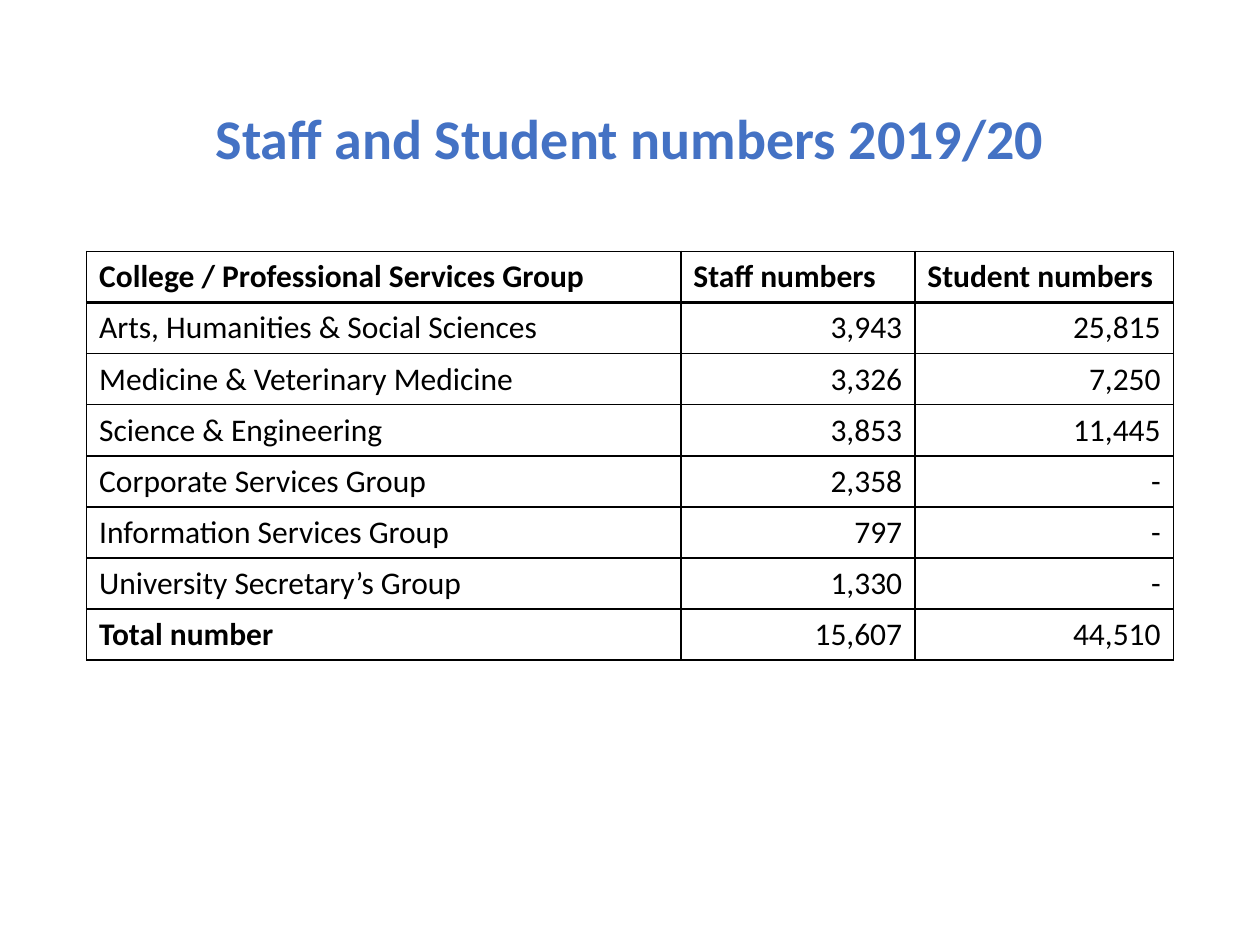
from lxml.etree import SubElement
from pptx import Presentation
from pptx.dml.color import RGBColor
from pptx.enum.text import MSO_ANCHOR, PP_ALIGN
from pptx.oxml.ns import qn
from pptx.util import Pt

COLORS = {"title": "4472C4", "text": "000000", "border": "000000"}
LEFT, WIDTH = 49.5, 621
COLUMN_WIDTHS = [339.6, 133.7, 147.7]
ROW_HEIGHT = 29.16
ROWS = [
    ("College / Professional Services Group", "Staff numbers", "Student numbers"),
    ("Arts, Humanities & Social Sciences", "3,943", "25,815"),
    ("Medicine & Veterinary Medicine", "3,326", "7,250"),
    ("Science & Engineering", "3,853", "11,445"),
    ("Corporate Services Group", "2,358", "-"),
    ("Information Services Group", "797", "-"),
    ("University Secretary’s Group", "1,330", "-"),
    ("Total number", "15,607", "44,510"),
]


def set_attributes(target, values):
    for name, value in values.items():
        setattr(target, name, value)


def write_text(frame, text, size, color, bold, **paragraph_format):
    para = frame.paragraphs[0]
    set_attributes(para, paragraph_format)
    span = para.add_run()
    span.text = text
    set_attributes(span.font, {"name": "Calibri", "size": Pt(size), "bold": bold})
    span.font.color.rgb = RGBColor.from_string(COLORS[color])


def add_title(page, text):
    title = page.shapes.title
    set_attributes(title, {"left": Pt(LEFT), "top": Pt(28.8),
                           "width": Pt(WIDTH), "height": Pt(104.4)})
    title.text_frame.vertical_anchor = MSO_ANCHOR.MIDDLE
    write_text(title.text_frame, text, 32, "title", True,
               alignment=PP_ALIGN.CENTER, line_spacing=0.9)


def set_borders(cell, widths):
    properties = cell._tc.get_or_add_tcPr()
    for position, (side, width) in enumerate(widths.items()):
        line = SubElement(properties, qn(f"a:ln{side}"), w=str(Pt(width)))
        properties.insert(position, line)
        fill = SubElement(line, qn("a:solidFill"))
        SubElement(fill, qn("a:srgbClr"), val=COLORS["border"])


def format_cell(cell, text, row, column):
    is_header = row == 0
    is_bold = is_header or (row == len(ROWS) - 1 and column == 0)
    is_number = not is_header and column > 0
    cell.fill.background()
    cell.vertical_anchor = MSO_ANCHOR.MIDDLE
    write_text(cell.text_frame, text, 18, "text", is_bold,
               alignment=PP_ALIGN.RIGHT if is_number else PP_ALIGN.LEFT)
    set_borders(cell, {"L": 1, "R": 1, "T": 1.5 if row == 1 else 1,
                       "B": 1.5 if is_header else 1})


def add_numbers_table(page):
    frame = page.shapes.add_table(len(ROWS), len(COLUMN_WIDTHS), Pt(LEFT), Pt(143.7),
                                  Pt(WIDTH), Pt(ROW_HEIGHT * len(ROWS)))
    table = frame.table
    set_attributes(table, {"first_row": False, "horz_banding": False})
    for column, width in zip(table.columns, COLUMN_WIDTHS):
        column.width = Pt(width)
    for row, texts in enumerate(ROWS):
        table.rows[row].height = Pt(ROW_HEIGHT)
        for column, text in enumerate(texts):
            format_cell(table.cell(row, column), text, row, column)


def main():
    deck = Presentation()
    set_attributes(deck, {"slide_width": Pt(720), "slide_height": Pt(540)})
    page = deck.slides.add_slide(deck.slide_layouts[5])
    add_title(page, "Staff and Student numbers 2019/20")
    add_numbers_table(page)
    deck.save("out.pptx")


if __name__ == "__main__":
    main()
